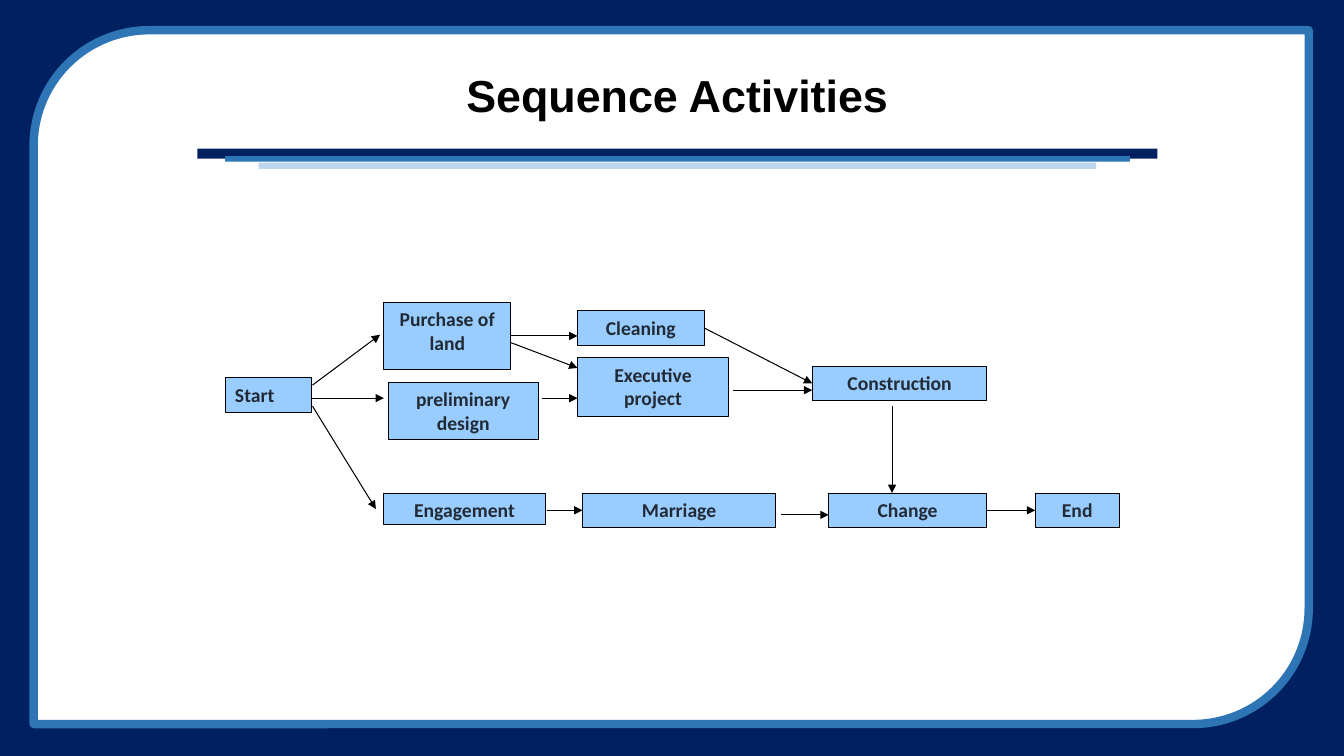
from lxml.etree import SubElement
from pptx import Presentation
from pptx.dml.color import RGBColor
from pptx.enum.shapes import MSO_CONNECTOR, MSO_SHAPE
from pptx.enum.text import MSO_ANCHOR, PP_ALIGN
from pptx.oxml.ns import qn
from pptx.util import Inches, Pt

WIDTH, HEIGHT = Inches(13.33), Inches(7.5)
COLS, ROWS = 160, 90

NAVY = RGBColor(0x00, 0x20, 0x60)
BLUE = RGBColor(0x2E, 0x75, 0xB6)
PALE = RGBColor(0xBD, 0xD7, 0xEE)
SKY = RGBColor(0x99, 0xCC, 0xFF)
INK = RGBColor(0x22, 0x2A, 0x35)
BLACK = RGBColor(0x00, 0x00, 0x00)
WHITE = RGBColor(0xFF, 0xFF, 0xFF)

LEFT, RIGHT = 1, 3  # connection sites of a rectangle

# Left column, top row, columns wide, rows high
TASKS = {
    "Start": (26.8, 45, 10.3, 4.1),
    "Purchase of land": (45.7, 36, 15.1, 8),
    "preliminary design": (46.2, 45.5, 17.9, 6.85),
    "Engagement": (45.7, 58.7, 19.2, 3.7),
    "Cleaning": (68.75, 37, 15.1, 4.1),
    "Executive project": (68.75, 42.6, 18, 6.95),
    "Marriage": (69.35, 58.7, 23, 4.1),
    "Construction": (96.7, 43.6, 20.8, 4.1),
    "Change": (98.65, 58.7, 18.8, 4.1),
    "End": (123.25, 58.7, 10, 4.1),
}

# Each end is a grid point, or a task with the side to join
ARROWS = [
    ((37.2, 45.85), (45.25, 39.85)),
    ((37.2, 47.4), (45.7, 47.4)),
    ((37.2, 48.35), (44.75, 60.6)),
    (("Purchase of land", RIGHT), (68.75, 40)),
    ((60.85, 40.8), (68.75, 43.8)),
    ((64.55, 47.4), (68.75, 47.4)),
    (("Cleaning", RIGHT), ("Construction", LEFT)),
    ((87.25, 46.45), (96.7, 46.45)),
    ((106.2, 48.35), (106.2, 58.7)),
    ((65.15, 60.75), ("Marriage", LEFT)),
    ((93, 61.3), (98.65, 61.3)),
    (("Change", RIGHT), ("End", LEFT)),
]


def grid(col, row):
    return round(WIDTH * col / COLS), round(HEIGHT * row / ROWS)


def panel(slide, area, fill, line=None, weight=0.75, kind=MSO_SHAPE.RECTANGLE):
    shape = slide.shapes.add_shape(kind, *grid(*area[:2]), *grid(*area[2:]))
    shape.shadow.inherit = False
    shape.fill.solid()
    shape.fill.fore_color.rgb = fill
    if line is None:
        shape.line.fill.background()
    else:
        shape.line.color.rgb = line
        shape.line.width = Pt(weight)
    return shape


def write(shape, text, font, size, color, align, anchor):
    frame = shape.text_frame
    frame.word_wrap = True
    frame.vertical_anchor = anchor
    para = frame.paragraphs[0]
    para.text = text
    para.alignment = align
    para.font.name = font
    para.font.size = Pt(size)
    para.font.bold = True
    para.font.color.rgb = color
    return para


def frame(slide):
    """Draw the navy border, the rounded page and the bars under the title."""
    panel(slide, (0, 0, COLS, ROWS), NAVY)
    panel(slide, (4, 3.6, 151.8, 82.6), WHITE, BLUE, 6,
          MSO_SHAPE.ROUND_2_DIAG_RECTANGLE)
    panel(slide, (23.5, 17.7, 114.3, 1.2), NAVY)
    panel(slide, (26.8, 18.6, 107.7, 0.65), BLUE)
    panel(slide, (30.8, 19.35, 99.7, 0.75), PALE)


def title(slide, text):
    box = slide.shapes.add_textbox(*grid(23.5, 5.9), *grid(114.3, 11.6))
    para = write(box, text, "Arial", 32, BLACK, PP_ALIGN.CENTER,
                 MSO_ANCHOR.MIDDLE)
    para.line_spacing = 0.9


def task(slide, name, area):
    box = panel(slide, area, SKY, BLACK)
    align = PP_ALIGN.LEFT if name == "Start" else PP_ALIGN.CENTER
    write(box, name, "Calibri", 14, INK, align, MSO_ANCHOR.TOP)
    return box


def point(end):
    """Turn an arrow's end into a place on the slide."""
    if end[0] not in TASKS:
        return grid(*end)
    name, side = end
    left, top, wide, high = TASKS[name]
    return grid(left + (wide if side == RIGHT else 0), top + high / 2)


def arrow(slide, boxes, start, stop):
    link = slide.shapes.add_connector(MSO_CONNECTOR.STRAIGHT, *point(start),
                                      *point(stop))
    for end, join in ((start, link.begin_connect), (stop, link.end_connect)):
        if end[0] in boxes:
            join(boxes[end[0]], end[1])
    link.line.color.rgb = BLACK
    link.line.width = Pt(0.75)
    SubElement(link.line._get_or_add_ln(), qn("a:tailEnd"), type="triangle")
    SubElement(link._element.spPr, qn("a:effectLst"))


def main():
    deck = Presentation()
    deck.slide_width, deck.slide_height = WIDTH, HEIGHT
    slide = deck.slides.add_slide(deck.slide_layouts[6])
    frame(slide)
    title(slide, "Sequence Activities")
    boxes = {name: task(slide, name, area) for name, area in TASKS.items()}
    for start, stop in ARROWS:
        arrow(slide, boxes, start, stop)
    deck.save("out.pptx")


if __name__ == "__main__":
    main()
